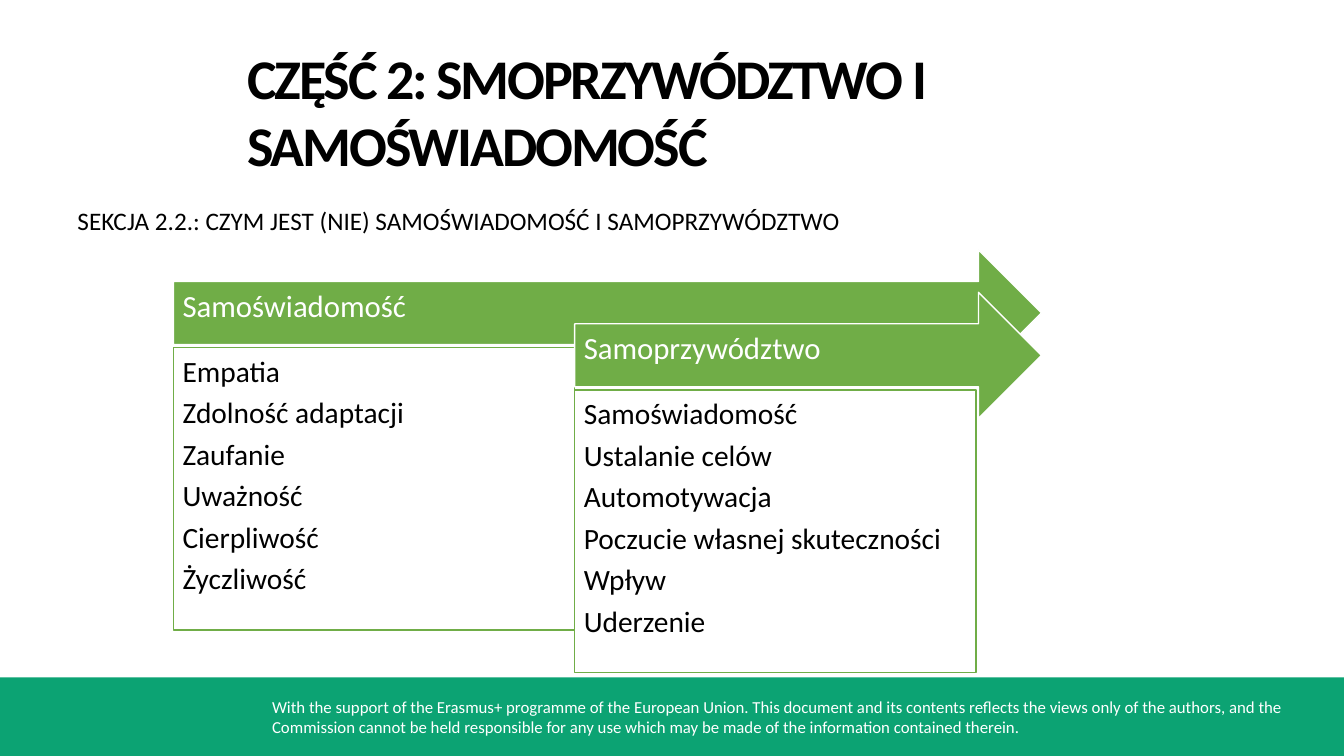
import pptx
import pptx.dml.color
import pptx.enum.shapes
import pptx.enum.text
import pptx.util

Inches = pptx.util.Inches
Pt = pptx.util.Pt
Shapes = pptx.enum.shapes.MSO_SHAPE
Anchor = pptx.enum.text.MSO_ANCHOR
Align = pptx.enum.text.PP_ALIGN

COLORS = {"footer": "0CA373", "accent": "70AD47", "white": "FFFFFF", "black": "000000"}
DEFAULT_INSETS = (0.1, 0.05, 0.1, 0.05)


class SlideBuilder:
    font_name = "Calibri"

    def __init__(self, slide):
        self.slide = slide

    def color(self, name):
        return pptx.dml.color.RGBColor.from_string(COLORS[name])

    def fill_text(self, frame, lines, size, color, insets=DEFAULT_INSETS,
                  anchor=Anchor.TOP, bold=False, tracking=None, paragraph_format=None):
        left, top, right, bottom = (Inches(inset) for inset in insets)
        frame_format = {
            "word_wrap": True, "vertical_anchor": anchor,
            "margin_left": left, "margin_top": top,
            "margin_right": right, "margin_bottom": bottom,
        }
        for name, value in frame_format.items():
            setattr(frame, name, value)
        for index, line in enumerate(lines):
            paragraph = frame.add_paragraph() if index else frame.paragraphs[0]
            for name, value in {"alignment": Align.LEFT, **(paragraph_format or {})}.items():
                setattr(paragraph, name, value)
            run = paragraph.add_run()
            run.text = line
            for name, value in {"name": self.font_name, "size": Pt(size), "bold": bold}.items():
                setattr(run.font, name, value)
            run.font.color.rgb = self.color(color)
            if tracking is not None:
                run.font._element.set("spc", str(round(tracking * 100)))

    def text(self, box, line, size, color, **style):
        label = self.slide.shapes.add_textbox(*map(Inches, box))
        self.fill_text(label.text_frame, [line], size, color, **style)

    def shape(self, preset, box, fill, outline=None):
        block = self.slide.shapes.add_shape(preset, *map(Inches, box))
        block.shadow.inherit = False
        block.fill.solid()
        block.fill.fore_color.rgb = self.color(fill)
        if outline:
            block.line.color.rgb = self.color(outline)
            block.line.width = Pt(1)
        else:
            block.line.fill.background()
        return block

    def arrow(self, box, heading):
        band = self.shape(Shapes.RIGHT_ARROW, box, "accent", "white")
        self.fill_text(band.text_frame, [heading], 22, "white",
                       insets=(0.09, 0.09, 0.28, 0.2), anchor=Anchor.MIDDLE,
                       paragraph_format={"line_spacing": 0.9})

    def panel(self, box, traits):
        card = self.shape(Shapes.RECTANGLE, box, "white", "accent")
        self.fill_text(card.text_frame, traits, 21, "black", insets=(0.09,) * 4,
                       paragraph_format={"line_spacing": 0.9, "space_after": Pt(7)})


def main():
    deck = pptx.Presentation()
    deck.slide_width, deck.slide_height = Inches(13.33), Inches(7.5)
    builder = SlideBuilder(deck.slides.add_slide(deck.slide_layouts[6]))

    builder.shape(Shapes.RECTANGLE, (0, 6.72, 13.33, 0.78), "footer")
    builder.text(
        (2.6, 6.86, 10.42, 0.5),
        "With the support of the Erasmus+ programme of the European Union. "
        "This document and its contents reflects the views only of the authors, "
        "and the Commission cannot be held responsible for any use which may be "
        "made of the information contained therein.",
        12, "white")
    builder.text((2.45, 0.42, 9.35, 1.36), "CZĘŚĆ 2: SMOPRZYWÓDZTWO I SAMOŚWIADOMOŚĆ",
                 40, "black", insets=(0, 0.01, 0, 0), bold=True, tracking=-1.5)
    builder.text((0.67, 1.99, 10.55, 0.4),
                 "SEKCJA 2.2.: CZYM JEST (NIE) SAMOŚWIADOMOŚĆ I SAMOPRZYWÓDZTWO", 18, "black")

    competences = {
        "Samoświadomość": ["Empatia", "Zdolność adaptacji", "Zaufanie",
                           "Uważność", "Cierpliwość", "Życzliwość"],
        "Samoprzywództwo": ["Samoświadomość", "Ustalanie celów", "Automotywacja",
                            "Poczucie własnej skuteczności", "Wpływ", "Uderzenie"],
    }
    panel_width, arrow_tip = 3.98, 10.33
    for step, (heading, traits) in enumerate(competences.items()):
        left, top = 1.72 + step * panel_width, 2.48 + step * 0.42
        builder.arrow((left, top, arrow_tip - left, 1.25), heading)
        builder.panel((left, top + 0.97, panel_width, 2.8), traits)

    deck.save("out.pptx")


if __name__ == "__main__":
    main()
